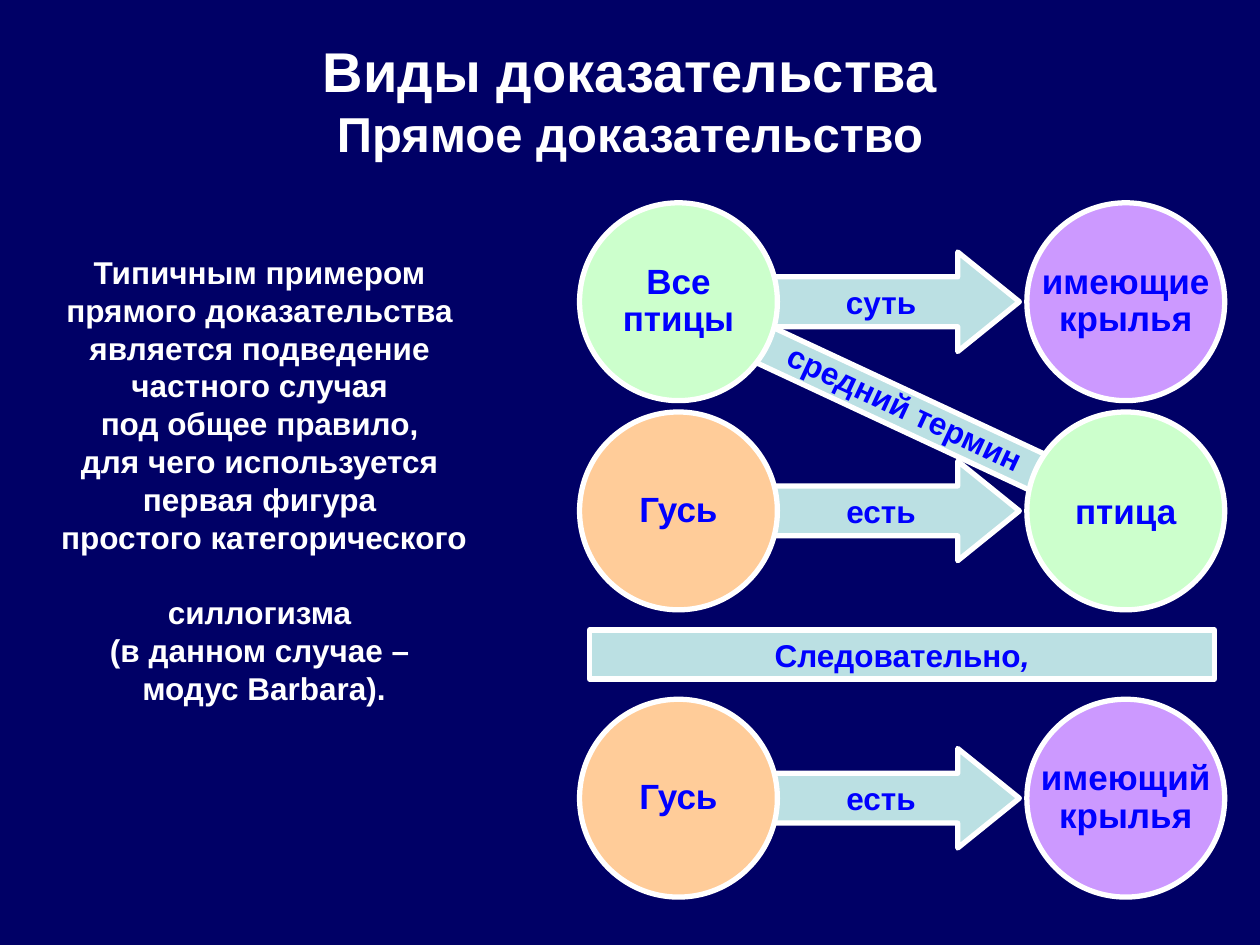
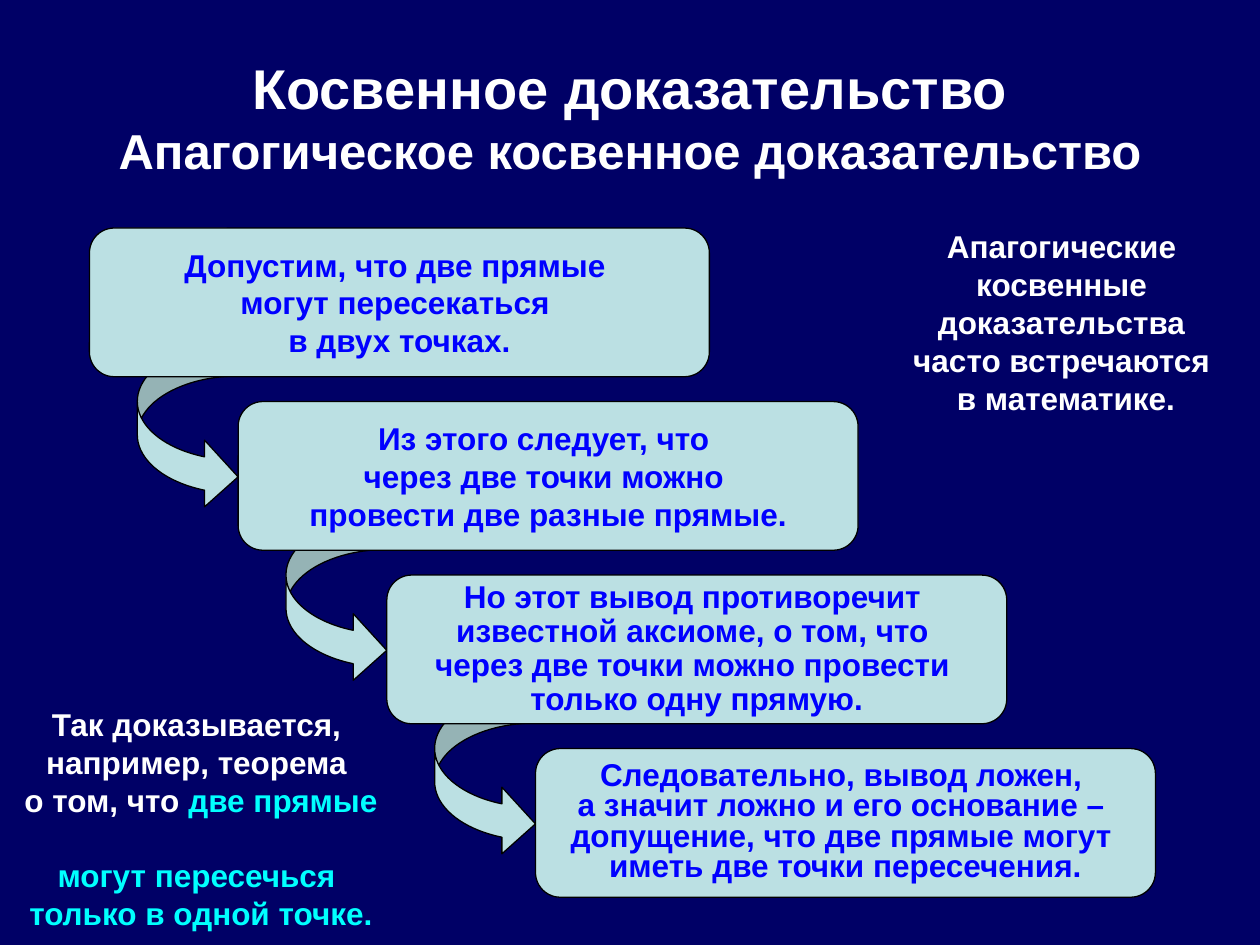
from pptx import Presentation
from pptx import util as u
from pptx.dml import color
from pptx.enum import shapes, text

FONT = "Arial"
NAVY = "000066"
WHITE = "FFFFFF"
BLACK = "000000"
BLUE = "0000FF"
CYAN = "00FFFF"
PALE = "BBE0E3"
GREEN = "CCFFCC"
ORANGE = "FFCC99"
VIOLET = "CC99FF"
KIND = shapes.MSO_SHAPE


def write(box, words, size, ink, spacing=None, wrap=True, anchor=text.MSO_ANCHOR.MIDDLE):
    frame = box.text_frame
    frame.word_wrap = wrap
    frame.auto_size = text.MSO_AUTO_SIZE.NONE
    frame.vertical_anchor = anchor
    para = frame.paragraphs[0]
    para.text = words
    para.alignment = text.PP_ALIGN.CENTER
    if spacing:
        para.line_spacing = spacing
    para.font.name = FONT
    para.font.size = u.Pt(size)
    para.font.bold = True
    para.font.color.rgb = color.RGBColor.from_string(ink)
    return para


def draw(page, kind, place, fill, edge, width, adjustments=()):
    shape = page.shapes.add_shape(kind, *map(u.Inches, place))
    shape.shadow.inherit = False
    shape.fill.solid()
    shape.fill.fore_color.rgb = color.RGBColor.from_string(fill)
    shape.line.color.rgb = color.RGBColor.from_string(edge)
    shape.line.width = u.Pt(width)
    for index, value in enumerate(adjustments):
        shape.adjustments[index] = value
    return shape


deck = Presentation()
deck.slide_width = u.Inches(10)
deck.slide_height = u.Inches(7.5)
background = deck.slide_master.background.fill
background.solid()
background.fore_color.rgb = color.RGBColor.from_string(NAVY)

titles = [
    ("Виды доказательства\nПрямое доказательство", 0.98),
    ("Косвенное доказательство\nАпагогическое косвенное доказательство", 1.25),
]
pages = []
for words, height in titles:
    page = deck.slides.add_slide(deck.slide_layouts[5])
    title = page.shapes.title
    title.left, title.top = u.Inches(0.5), u.Inches(0.3)
    title.width, title.height = u.Inches(9), u.Inches(height)
    para = write(title, words, 28, WHITE)
    para.runs[0].font.size = u.Pt(32)
    pages.append(page)
direct, indirect = pages

judgements = [
    (1.61, "Все\nптицы", GREEN, "суть", "имеющие\nкрылья", VIOLET, 0.9),
    (3.27, "Гусь", ORANGE, "есть", "птица", GREEN, 1.0),
    (5.55, "Гусь", ORANGE, "есть", "имеющий\nкрылья", VIOLET, 0.9),
]
for top, subject, subject_fill, verb, predicate, predicate_fill, spacing in judgements:
    arrow = draw(direct, KIND.RIGHT_ARROW, (6.14, top + 0.39, 1.95, 0.79), PALE, WHITE, 3, (0.5, 0.619))
    write(arrow, verb, 18, BLUE, wrap=False)

conclusion = draw(direct, KIND.RECTANGLE, (4.68, 5, 4.96, 0.39), PALE, WHITE, 3)
para = write(conclusion, "Следовательно", 18, BLUE, wrap=False)
comma = para.add_run()
comma.text = ","
comma.font.italic = True

middle_term = draw(direct, KIND.RECTANGLE, (5.85, 3.07, 2.52, 0.31), PALE, WHITE, 3)
middle_term.rotation = 25
write(middle_term, "средний термин", 18, BLUE, wrap=False)
middle_term.text_frame.margin_left = u.Inches(0.24)
middle_term.text_frame.margin_top = 0

for top, subject, subject_fill, verb, predicate, predicate_fill, spacing in judgements:
    circle = draw(direct, KIND.OVAL, (4.6, top, 1.57, 1.57), subject_fill, WHITE, 3)
    write(circle, subject, 20, BLUE, 0.9, wrap=False)
    circle = draw(direct, KIND.OVAL, (8.15, top, 1.57, 1.57), predicate_fill, WHITE, 3)
    write(circle, predicate, 20, BLUE, spacing, wrap=False)

example = direct.shapes.add_textbox(*map(u.Inches, (0.37, 1.96, 3.45, 3.4)))
write(
    example,
    "Типичным примером \nпрямого доказательства \nявляется подведение \nчастного случая \n"
    "под общее правило, \nдля чего используется \nпервая фигура \nпростого категорического \n"
    "силлогизма \n(в данном случае – \nмодус Barbara).",
    18, WHITE, anchor=text.MSO_ANCHOR.TOP,
)

steps = [
    ("Допустим, что две прямые \nмогут пересекаться \nв двух точках.", None),
    ("Из этого следует, что \nчерез две точки можно \nпровести две разные прямые.", None),
    ("Но этот вывод противоречит \nизвестной аксиоме, о том, что \n"
     "через две точки можно провести \nтолько одну прямую.", 0.9),
    ("Следовательно, вывод ложен, \nа значит ложно и его основание – \n"
     "допущение, что две прямые могут \nиметь две точки пересечения.", 0.8),
]
STEP_X, STEP_Y = 1.18, 1.377
for index in reversed(range(len(steps) - 1)):
    place = (1.09 + index * STEP_X, 2.72 + index * STEP_Y, 0.8, 1.33)
    draw(indirect, KIND.CURVED_RIGHT_ARROW, place, PALE, BLACK, 0.75, (0.331, 0.662, 0.333))
for index, (words, spacing) in enumerate(steps):
    place = (0.71 + index * STEP_X, 1.81 + index * STEP_Y, 4.92, 1.18)
    step = draw(indirect, KIND.ROUNDED_RECTANGLE, place, PALE, BLACK, 0.75)
    write(step, words, 18, BLUE, spacing)

theorem = indirect.shapes.add_textbox(*map(u.Inches, (0.08, 5.71, 3.03, 1.57)))
para = write(theorem, "Так доказывается, \nнапример, теорема \nо том, что ", 18, WHITE)
for index, line in enumerate(["две прямые ", "могут пересечься ", "только в одной точке."]):
    if index:
        para.add_line_break()
    span = para.add_run()
    span.text = line
    span.font.color.rgb = color.RGBColor.from_string(CYAN)

remark = indirect.shapes.add_textbox(*map(u.Inches, (7.08, 1.77, 2.76, 1.57)))
write(
    remark,
    "Апагогические \nкосвенные \nдоказательства \nчасто встречаются \nв математике.",
    18, WHITE,
)

deck.save("out.pptx")
